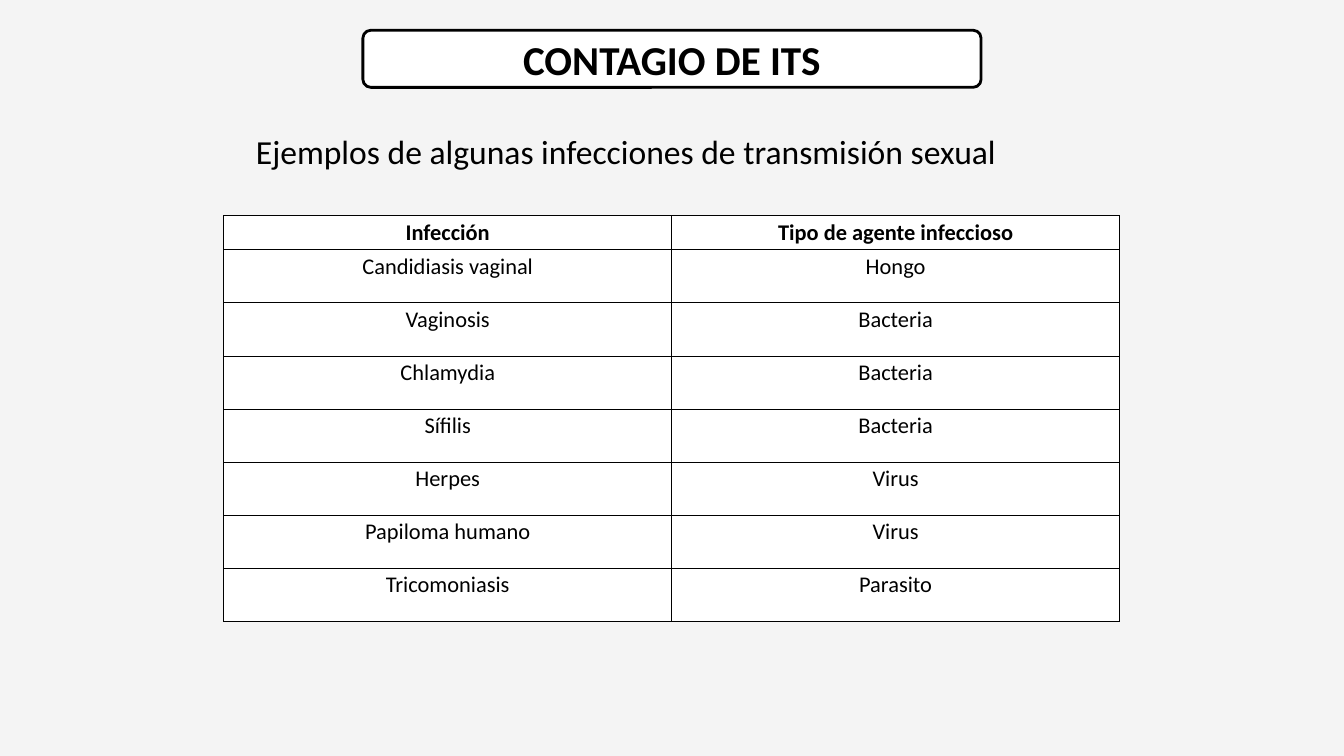
from dataclasses import dataclass

from lxml.etree import SubElement
from pptx import Presentation
from pptx.dml.color import RGBColor as RGB
from pptx.enum.shapes import MSO_SHAPE as SHAPE
from pptx.enum.text import MSO_ANCHOR as ANCHOR, MSO_AUTO_SIZE as AUTO, PP_ALIGN as ALIGN
from pptx.oxml.ns import qn
from pptx.util import Inches, Pt


@dataclass(frozen=True)
class Theme:
    font: str = "Calibri"
    background: RGB = RGB(0xF4, 0xF4, 0xF4)
    paper: RGB = RGB(0xFF, 0xFF, 0xFF)
    ink: RGB = RGB(0, 0, 0)
    title: int = 44
    subtitle: int = 36
    cell: int = 24
    frame: int = 3
    grid: int = 1


class SlideBuilder:
    def __init__(self, prs, theme):
        self.theme = theme
        self.s = prs.slides.add_slide(prs.slide_layouts[5])
        fill = self.s.background.fill
        fill.solid()
        fill.fore_color.rgb = theme.background

    def set_text(self, tf, text, size, align, bold=False):
        tf.text = text
        p = tf.paragraphs[0]
        p.alignment = align
        p.font.name = self.theme.font
        p.font.size = Pt(size)
        p.font.bold = bold
        p.font.color.rgb = self.theme.ink

    def title(self, text, left, top, width, height):
        area = [Inches(v) for v in (left, top, width, height)]
        sp = self.s.shapes.title
        sp.left, sp.top, sp.width, sp.height = area
        tf = sp.text_frame
        tf.auto_size = AUTO.NONE
        tf.vertical_anchor = ANCHOR.MIDDLE
        self.set_text(tf, text, self.theme.title, ALIGN.CENTER, True)

        box = self.s.shapes.add_shape(SHAPE.ROUNDED_RECTANGLE, *area)
        box.adjustments[0] = 0.14
        box.shadow.inherit = False
        box.fill.solid()
        box.fill.fore_color.rgb = self.theme.paper
        box.line.color.rgb = self.theme.ink
        box.line.width = Pt(self.theme.frame)
        sp.element.addprevious(box.element)

    def subtitle(self, text, left, top, width, height):
        sp = self.s.shapes.add_textbox(*(Inches(v) for v in (left, top, width, height)))
        tf = sp.text_frame
        tf.word_wrap = True
        tf.auto_size = AUTO.SHAPE_TO_FIT_TEXT
        self.set_text(tf, text, self.theme.subtitle, ALIGN.JUSTIFY)

    def cell_borders(self, cell):
        props = cell._tc.get_or_add_tcPr()
        for side in ("a:lnL", "a:lnR", "a:lnT", "a:lnB"):
            line = SubElement(props, qn(side), w=str(Pt(self.theme.grid)))
            fill = SubElement(line, qn("a:solidFill"))
            SubElement(fill, qn("a:srgbClr"), val=str(self.theme.ink))

    def table(self, rows, left, top, width, header_height, row_height):
        height = header_height + row_height * (len(rows) - 1)
        area = [Inches(v) for v in (left, top, width, height)]
        table = self.s.shapes.add_table(len(rows), len(rows[0]), *area).table
        table.first_row = table.horz_banding = False
        for i, row in enumerate(rows):
            header = i == 0
            table.rows[i].height = Inches(header_height if header else row_height)
            for j, text in enumerate(row):
                cell = table.cell(i, j)
                self.cell_borders(cell)
                cell.fill.solid()
                cell.fill.fore_color.rgb = self.theme.paper
                cell.vertical_anchor = ANCHOR.MIDDLE if header else ANCHOR.TOP
                self.set_text(cell.text_frame, text, self.theme.cell, ALIGN.CENTER, header)


def main():
    prs = Presentation()
    prs.slide_width, prs.slide_height = Inches(20), Inches(11.25)
    infections = [
        ("Infección", "Tipo de agente infeccioso"),
        ("Candidiasis vaginal", "Hongo"),
        ("Vaginosis", "Bacteria"),
        ("Chlamydia", "Bacteria"),
        ("Sífilis", "Bacteria"),
        ("Herpes", "Virus"),
        ("Papiloma humano", "Virus"),
        ("Tricomoniasis", "Parasito"),
    ]
    slide = SlideBuilder(prs, Theme())
    slide.title("CONTAGIO DE ITS", 5.4, 0.45, 9.2, 0.85)
    slide.table(infections, 3.33, 3.21, 13.33, 0.5, 0.79)
    slide.subtitle("Ejemplos de algunas infecciones de transmisión sexual", 3.71, 1.9, 12.58, 0.71)
    prs.save("out.pptx")


if __name__ == "__main__":
    main()
